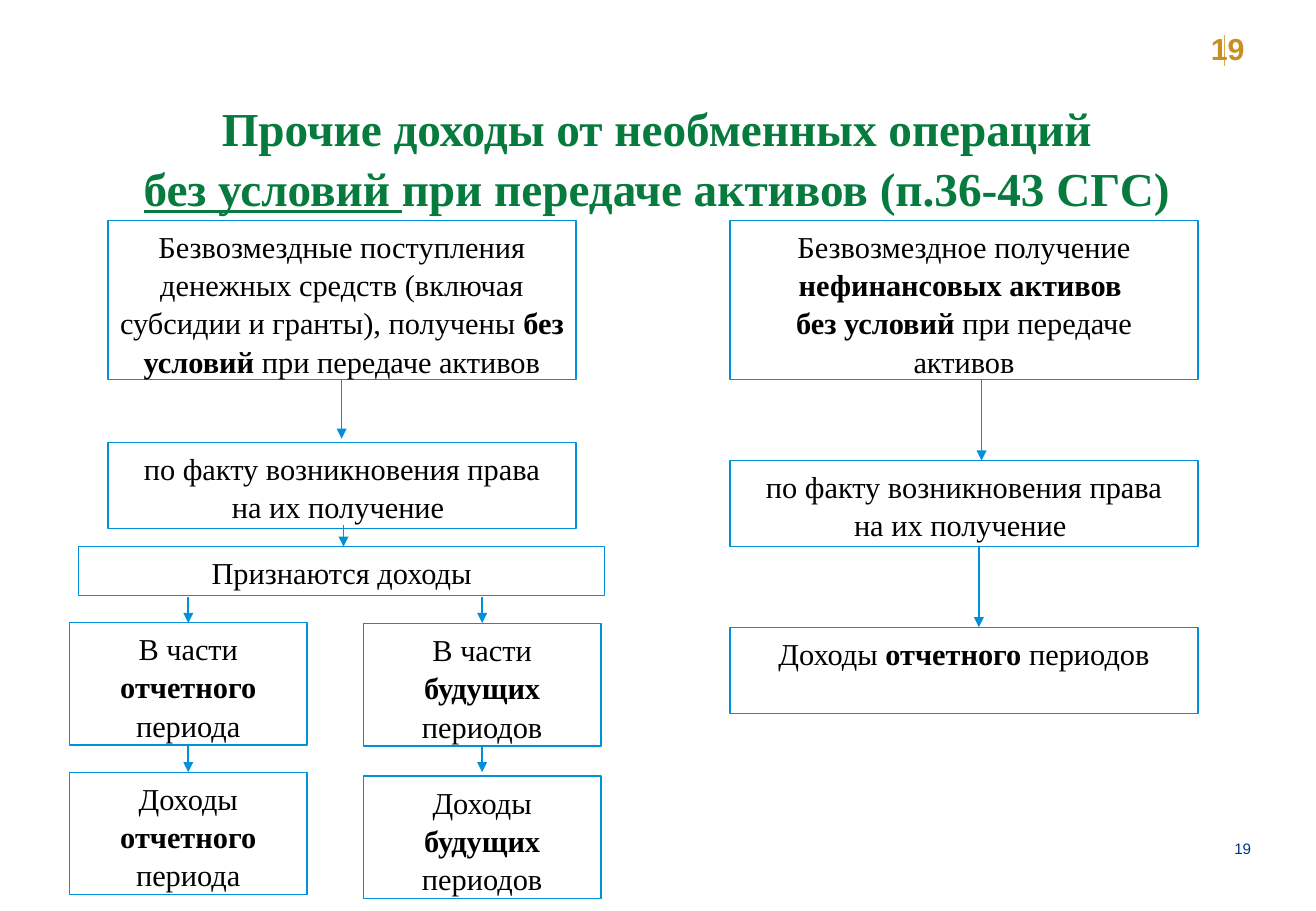
from dataclasses import dataclass

from lxml import etree
from pptx import Presentation
from pptx.dml.color import RGBColor
from pptx.enum.shapes import MSO_CONNECTOR, MSO_SHAPE
from pptx.enum.text import MSO_ANCHOR, PP_ALIGN
from pptx.oxml.ns import qn
from pptx.util import Pt

RECTANGLE = MSO_SHAPE.RECTANGLE
STRAIGHT = MSO_CONNECTOR.STRAIGHT
TOP, MIDDLE = MSO_ANCHOR.TOP, MSO_ANCHOR.MIDDLE
LEFT, CENTER, RIGHT = PP_ALIGN.LEFT, PP_ALIGN.CENTER, PP_ALIGN.RIGHT


@dataclass(frozen=True)
class Theme:
    serif: str = "Times New Roman"
    sans: str = "Arial"
    title: RGBColor = RGBColor(0x07, 0x7A, 0x3E)
    body: RGBColor = RGBColor(0, 0, 0)
    outline: RGBColor = RGBColor(0x00, 0x91, 0xDA)
    gold: RGBColor = RGBColor(0xC7, 0x90, 0x23)
    gold_line: RGBColor = RGBColor(0xDE, 0xAA, 0x46)
    footer: RGBColor = RGBColor(0x00, 0x33, 0x8D)
    title_size: int = 28
    body_size: int = 18
    footer_size: int = 9
    line_spacing: float = 1.05


class SlideBuilder:
    def __init__(self, slide, theme):
        self.slide = slide
        self.theme = theme

    def fill_text(self, frame, lines, font_name, size, color, align, bold=None,
                  underline_stars=False, spacing=None):
        """Add one paragraph per line; *starred* parts become bold or underlined."""
        frame.word_wrap = True
        for index, line in enumerate(lines):
            paragraph = frame.paragraphs[0] if index == 0 else frame.add_paragraph()
            paragraph.alignment = align
            if spacing:
                paragraph.line_spacing = spacing
            font = paragraph.font
            font.name, font.size, font.bold = font_name, Pt(size), bold
            font.color.rgb = color
            for position, part in enumerate(line.split("*")):
                if not part:
                    continue
                run = paragraph.add_run()
                run.text = part
                if position % 2 and underline_stars:
                    run.font.underline = True
                elif position % 2:
                    run.font.bold = True

    def text_box(self, left, top, width, height):
        shape = self.slide.shapes.add_textbox(Pt(left), Pt(top), Pt(width), Pt(height))
        return shape.text_frame

    def title(self, left, top, width, height, lines):
        theme = self.theme
        frame = self.text_box(left, top, width, height)
        frame.vertical_anchor = MIDDLE
        self.fill_text(frame, lines, theme.serif, theme.title_size, theme.title, CENTER,
                       bold=True, underline_stars=True, spacing=theme.line_spacing)

    def header_number(self, left, top, width, height, text):
        theme = self.theme
        self.fill_text(self.text_box(left, top, width, height), [text], theme.sans,
                       theme.body_size, theme.gold, LEFT, bold=True)

    def footer_number(self, left, top, width, height, text):
        theme = self.theme
        frame = self.text_box(left, top, width, height)
        frame.margin_left = frame.margin_right = 0
        frame.margin_top = frame.margin_bottom = 0
        self.fill_text(frame, [text], theme.sans, theme.footer_size, theme.footer, RIGHT)

    def box(self, left, top, width, height, *lines):
        theme = self.theme
        shape = self.slide.shapes.add_shape(
            RECTANGLE, Pt(left), Pt(top), Pt(width), Pt(height))
        shape.shadow.inherit = False
        shape.fill.background()
        shape.line.color.rgb = theme.outline
        shape.line.width = Pt(0.75)
        shape.text_frame.vertical_anchor = TOP
        self.fill_text(shape.text_frame, lines, theme.serif, theme.body_size, theme.body,
                       CENTER, spacing=theme.line_spacing)

    def vertical_line(self, x, top, bottom, color):
        connector = self.slide.shapes.add_connector(
            STRAIGHT, Pt(x), Pt(top), Pt(x), Pt(bottom))
        connector.line.color.rgb = color
        connector.line.width = Pt(1)
        properties = connector._element.spPr
        etree.SubElement(properties, qn("a:effectLst"))
        return properties.find(qn("a:ln"))

    def arrow(self, x, top, bottom):
        outline = self.vertical_line(x, top, bottom, self.theme.outline)
        etree.SubElement(outline, qn("a:tailEnd"), type="triangle")


def main():
    presentation = Presentation()
    presentation.slide_width, presentation.slide_height = Pt(780), Pt(540)
    slide = presentation.slides.add_slide(presentation.slide_layouts[6])
    theme = Theme()
    builder = SlideBuilder(slide, theme)

    builder.footer_number(710.6, 497.5, 31, 11.5, "19")
    builder.vertical_line(725.8, 20.9, 38.9, theme.gold_line)
    builder.header_number(710.6, 14.4, 49.7, 28.8, "19")
    builder.title(18, 54, 742.3, 77, [
        "Прочие доходы от необменных операций",
        "*без условий *при передаче активов (п.36-43 СГС)"])

    cash_left, assets_left, wide = 64, 432.7, 277.4
    top, tall, medium = 130.5, 94.3, 51
    right_of_receipt = ("по факту возникновения права", "на их получение ")

    builder.box(cash_left, top, wide, tall,
                "Безвозмездные поступления денежных средств (включая субсидии и гранты), "
                "получены *без условий *при передаче активов")
    builder.box(cash_left, 262.2, wide, medium, *right_of_receipt)
    builder.box(46.5, 324, 312, 29, "Признаются доходы")
    builder.arrow(202.5, 225.2, 260)
    builder.arrow(203.6, 311, 324)

    builder.box(assets_left, top, wide, tall,
                "Безвозмездное получение *нефинансовых активов *",
                "*без условий *при передаче активов")
    builder.box(assets_left, 273, wide, medium, *right_of_receipt)
    builder.box(assets_left, 371.8, wide, medium, "Доходы *отчетного* периодов")
    builder.arrow(581.8, 225.2, 273)
    builder.arrow(580.2, 324, 371.8)

    narrow, short = 140.8, 72.7
    branches = [(41.2, 368.9, 457.7, "*отчетного* периода"),
                (215.4, 369.5, 460, "*будущих* периодов")]
    for left, part_top, income_top, period in branches:
        builder.box(left, part_top, narrow, short, "В части " + period)
        builder.box(left, income_top, narrow, short, "Доходы", period)
        for start, end in ((354, 369.3), (442.2, 457.7)):
            builder.arrow(left + narrow / 2, start, end)

    presentation.save("out.pptx")


if __name__ == "__main__":
    main()
